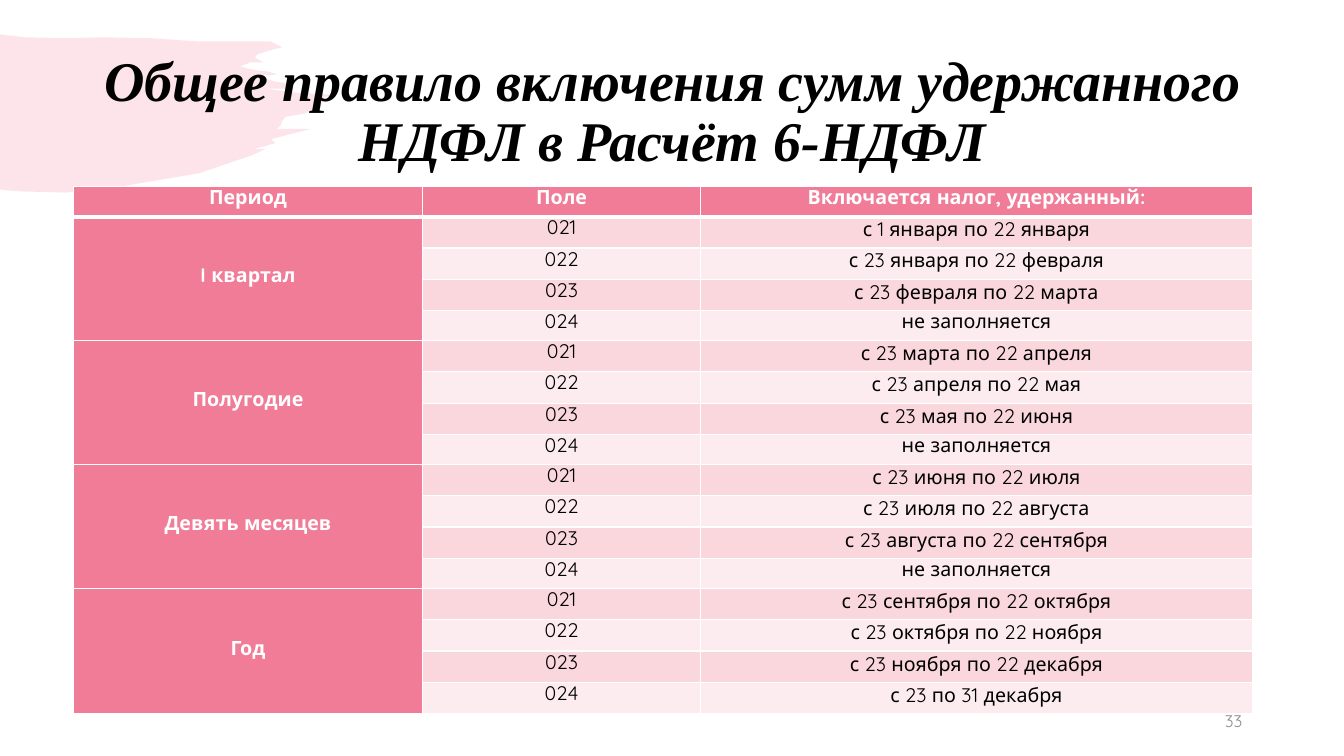
from lxml import etree
from pptx import Presentation
from pptx import util as u
from pptx.dml.color import RGBColor
from pptx.enum import text
from pptx.oxml import ns

PX = 9144  # 100 px to the inch
COLORS = {"rose": "F07C98", "band": "F9D7DD", "pale": "FCECEF",
          "white": "FFFFFF", "black": "000000", "grey": "8C8C8C"}
BODY, SERIF = "Quicksand", "Times New Roman"

TITLE = "Общее правило включения сумм удержанного НДФЛ в Расчёт 6-НДФЛ"
PAGE = "33"
HEADERS = ["Период", "Поле", "Включается налог, удержанный:"]
FIELDS = ["021", "022", "023", "024"]
EMPTY = "не заполняется"
PERIODS = [
    ("I квартал", ["с 1 января по 22 января", "с 23 января по 22 февраля",
                   "с 23 февраля по 22 марта", EMPTY]),
    ("Полугодие", ["с 23 марта по 22 апреля", "с 23 апреля по 22 мая",
                   "с 23 мая по 22 июня", EMPTY]),
    ("Девять месяцев", ["с 23 июня по 22 июля", "с 23 июля по 22 августа",
                        "с 23 августа по 22 сентября", EMPTY]),
    ("Год", ["с 23 сентября по 22 октября", "с 23 октября по 22 ноября",
             "с 23 ноября по 22 декабря", "с 23 по 31 декабря"]),
]
COL_WIDTHS = [346, 276, 547]
BRUSH = [
    (0, 34), (6, 35), (25, 37), (66, 38), (102, 37), (151, 38), (194, 41),
    (248, 41), (268, 41), (280, 47), (271, 49), (255, 54), (253, 57), (256, 59),
    (262, 62), (248, 62), (238, 66), (246, 68), (256, 70), (266, 71), (275, 74),
    (251, 75), (263, 78), (273, 81), (280, 82), (288, 83), (290, 85), (287, 88),
    (284, 88), (263, 88), (295, 92), (330, 94), (321, 97), (318, 106),
    (307, 111), (300, 113), (283, 116), (280, 120), (278, 125), (274, 128),
    (308, 128), (269, 138), (273, 142), (252, 148), (263, 148), (250, 154),
    (197, 172), (102, 188), (65, 191), (23, 190), (7, 189), (0, 188),
]


def rgb(name):
    return RGBColor.from_string(COLORS[name])


def write(tf, words, size=14, color="black", font=BODY, bold=False, italic=False,
          align=text.PP_ALIGN.CENTER, spacing=None, after=None):
    p = tf.paragraphs[0]
    p.alignment, p.line_spacing, p.space_after = align, spacing, after
    r = p.add_run()
    r.text = words
    f = r.font
    f.name, f.size, f.bold, f.italic = font, u.Pt(size), bold, italic
    f.color.rgb = rgb(color)


def add_text(s, box, words, **fmt):
    tf = s.shapes.add_textbox(*(v * PX for v in box)).text_frame
    tf.word_wrap = True
    tf.vertical_anchor = text.MSO_ANCHOR.MIDDLE
    write(tf, words, **fmt)


def set_borders(cell, top=1, bottom=1):
    tc_pr = cell._tc.get_or_add_tcPr()
    widths = {"lnL": 1, "lnR": 1, "lnT": top, "lnB": bottom}
    for i, (side, width) in enumerate(widths.items()):
        ln = etree.Element(ns.qn("a:" + side), w=str(u.Pt(width)))
        fill = etree.SubElement(ln, ns.qn("a:solidFill"))
        etree.SubElement(fill, ns.qn("a:srgbClr"), val=COLORS["white"])
        tc_pr.insert(i, ln)


def fill_cell(cell, words, fill, top=1, bottom=1, spacing=12.8, **fmt):
    cell.margin_left = cell.margin_right = 5 * PX
    cell.margin_top = cell.margin_bottom = 5 * PX
    cell.fill.solid()
    cell.fill.fore_color.rgb = rgb(fill)
    set_borders(cell, top, bottom)
    write(cell.text_frame, words, spacing=u.Pt(spacing), after=u.Pt(8), **fmt)


def add_brush(s):
    builder = s.shapes.build_freeform(*BRUSH[0], scale=PX)
    builder.add_line_segments(BRUSH[1:], close=True)
    sp = builder.convert_to_shape()
    sp.shadow.inherit = False
    sp.line.fill.background()
    sp.fill.solid()
    sp.fill.fore_color.rgb = rgb("rose")
    clr = sp._element.spPr.find(".//" + ns.qn("a:srgbClr"))
    etree.SubElement(clr, ns.qn("a:alpha"), val="20000")


def add_periods(s):
    size = len(FIELDS)
    rows = 1 + size * len(PERIODS)
    table = s.shapes.add_table(rows, len(HEADERS), 73 * PX, 185 * PX,
                               sum(COL_WIDTHS) * PX, 525 * PX).table
    table.horz_banding = False
    for col, width in zip(table.columns, COL_WIDTHS):
        col.width = width * PX
    for row in table.rows:
        row.height = 31 * PX
    table.rows[0].height = 30 * PX
    for c, words in enumerate(HEADERS):
        fill_cell(table.cell(0, c), words, "rose", bottom=3, color="white", bold=True)
    for i, (period, ranges) in enumerate(PERIODS):
        first = 1 + i * size
        for j, (field, dates) in enumerate(zip(FIELDS, ranges)):
            r, fill = first + j, "pale" if j % 2 else "band"
            top = 3 if r == 1 else 1
            if dates == EMPTY:
                table.rows[r].height = 30 * PX
            fill_cell(table.cell(r, 1), field, fill, top=top)
            fill_cell(table.cell(r, 2), dates, fill, top=top,
                      spacing=12.8 if dates == EMPTY else 14.2)
        head = table.cell(first, 0)
        head.merge(table.cell(first + size - 1, 0))
        fill_cell(head, period, "rose", top=3 if i == 0 else 1, color="white", bold=True)
        head.vertical_anchor = text.MSO_ANCHOR.MIDDLE


def main():
    prs = Presentation()
    prs.slide_width, prs.slide_height = 1333 * PX, 750 * PX
    s = prs.slides.add_slide(prs.slide_layouts[6])
    add_brush(s)
    add_text(s, (92, 40, 1150, 145), TITLE, size=40, font=SERIF, bold=True,
             italic=True, spacing=0.9)
    add_periods(s)
    add_text(s, (942, 695, 300, 40), PAGE, size=12, color="grey",
             align=text.PP_ALIGN.RIGHT)
    prs.save("out.pptx")


if __name__ == "__main__":
    main()
